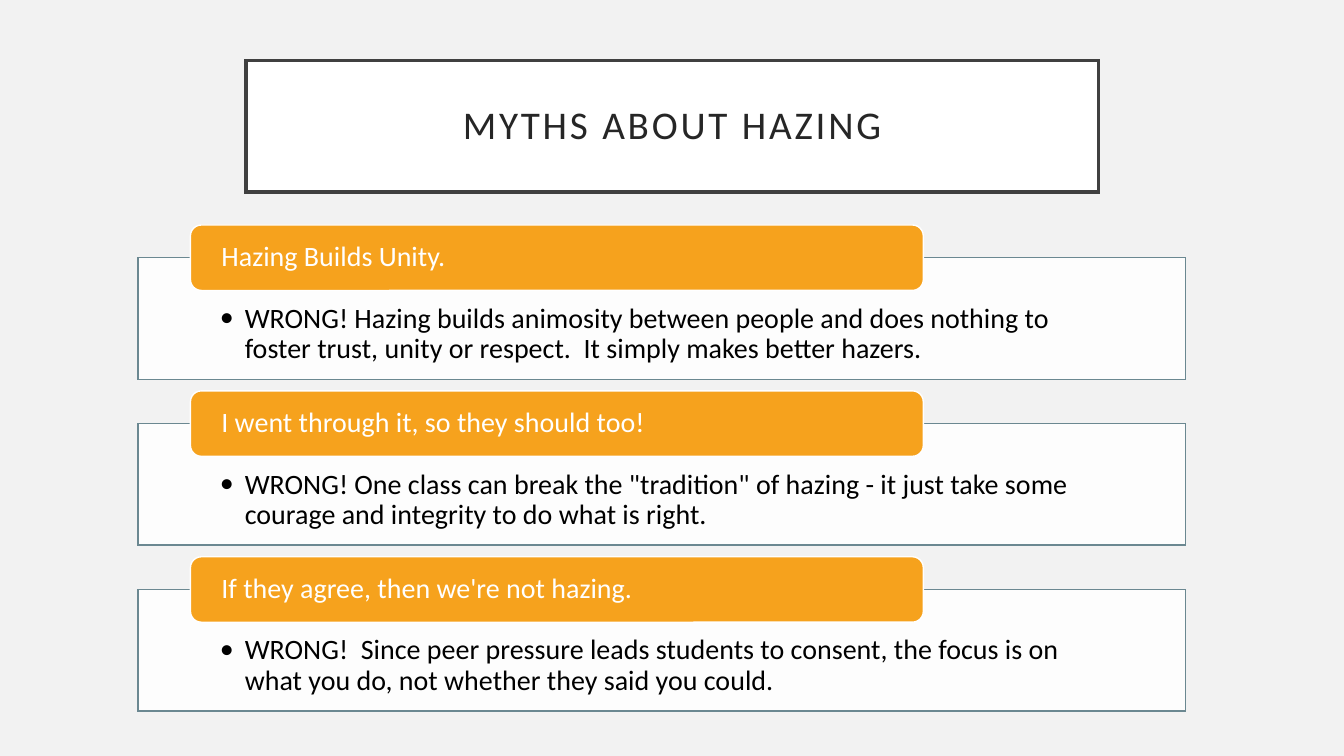
from lxml import etree
from pptx import Presentation
from pptx.dml.color import RGBColor
from pptx.enum.shapes import MSO_SHAPE
from pptx.enum.text import MSO_ANCHOR, PP_ALIGN
from pptx.oxml.ns import qn
from pptx.util import Cm, Pt

TITLE = "MYTHS ABOUT HAZING"
MYTHS = [
    ("Hazing Builds Unity.",
     "WRONG! Hazing builds animosity between people and does nothing to "
     "foster trust, unity or respect.  It simply makes better hazers."),
    ("I went through it, so they should too!",
     "WRONG! One class can break the \"tradition\" of hazing - it just take some "
     "courage and integrity to do what is right."),
    ("If they agree, then we're not hazing.",
     "WRONG!  Since peer pressure leads students to consent, the focus is on "
     "what you do, not whether they said you could."),
]

PALE = RGBColor(0xF2, 0xF2, 0xF2)
WHITE = RGBColor(0xFF, 0xFF, 0xFF)
BLACK = RGBColor(0, 0, 0)
DARK = RGBColor(0x26, 0x26, 0x26)
EDGE = RGBColor(0x40, 0x40, 0x40)
TEAL = RGBColor(0x6B, 0x88, 0x91)
GOLD = RGBColor(0xF6, 0xA2, 0x1D)

RECT, ROUND = MSO_SHAPE.RECTANGLE, MSO_SHAPE.ROUNDED_RECTANGLE
TOP, MIDDLE = MSO_ANCHOR.TOP, MSO_ANCHOR.MIDDLE
LEFT, CENTER = PP_ALIGN.LEFT, PP_ALIGN.CENTER

FONT = "Calibri"
FIRST, PITCH, DROP = 5.67, 4.18, 0.82


def paint(shape, fill, line, width):
    shape.fill.solid()
    shape.fill.fore_color.rgb = fill
    shape.line.color.rgb = line
    shape.line.width = Pt(width)
    edge = shape._element.spPr.find(qn("a:ln"))
    etree.SubElement(edge, qn("a:miter")).set("lim", "800000")


def write(shape, text, size, color, pads, anchor, align):
    frame = shape.text_frame
    frame.word_wrap = True
    frame.vertical_anchor = anchor
    (frame.margin_left, frame.margin_top,
     frame.margin_right, frame.margin_bottom) = [Cm(pad) for pad in pads]
    para = frame.paragraphs[0]
    para.alignment = align
    para.line_spacing = 0.9
    run = para.add_run()
    run.text = text
    run.font.name = FONT
    run.font.size = Pt(size)
    run.font.color.rgb = color
    return para


def add_box(slide, kind, place, fill, line):
    shape = slide.shapes.add_shape(kind, *[Cm(n) for n in place])
    shape.shadow.inherit = False
    paint(shape, fill, line, 1)
    return shape


def add_bullet(para):
    props = para._p.get_or_add_pPr()
    props.set("marL", str(Cm(0.63)))
    props.set("indent", str(Cm(-0.63)))
    etree.SubElement(props, qn("a:buFont")).set("typeface", FONT)
    etree.SubElement(props, qn("a:buChar")).set("char", "•")


def fade(shape, percent):
    color = shape._element.spPr.find(qn("a:solidFill"))[0]
    etree.SubElement(color, qn("a:alpha")).set("val", str(percent * 1000))


def add_title(slide):
    title = slide.shapes.title
    title.left, title.top, title.width, title.height = [
        Cm(n) for n in (6.2, 1.53, 21.48, 3.31)]
    paint(title, WHITE, EDGE, 2.5)
    para = write(title, TITLE, 28, DARK, [0.51] * 4, MIDDLE, CENTER)
    para.runs[0].font._element.set("spc", "200")


def add_myth(slide, top, claim, reply):
    body = add_box(slide, RECT, (3.48, top + DROP, 26.39, 3.07), WHITE, TEAL)
    fade(body, 90)
    para = write(body, reply, 20, BLACK, (2.06, 1.17, 2.06, 0.3), TOP, LEFT)
    add_bullet(para)
    tab = add_box(slide, ROUND, (4.8, top, 18.47, 1.65), GOLD, WHITE)
    write(tab, claim, 20, WHITE, (0.7, 0, 0.7, 0), MIDDLE, LEFT)


def main():
    deck = Presentation()
    deck.slide_width, deck.slide_height = Cm(33.87), Cm(19.05)
    slide = deck.slides.add_slide(deck.slide_layouts[5])
    slide.background.fill.solid()
    slide.background.fill.fore_color.rgb = PALE
    add_title(slide)
    for i, (claim, reply) in enumerate(MYTHS):
        add_myth(slide, FIRST + i * PITCH, claim, reply)
    deck.save("out.pptx")


if __name__ == "__main__":
    main()
